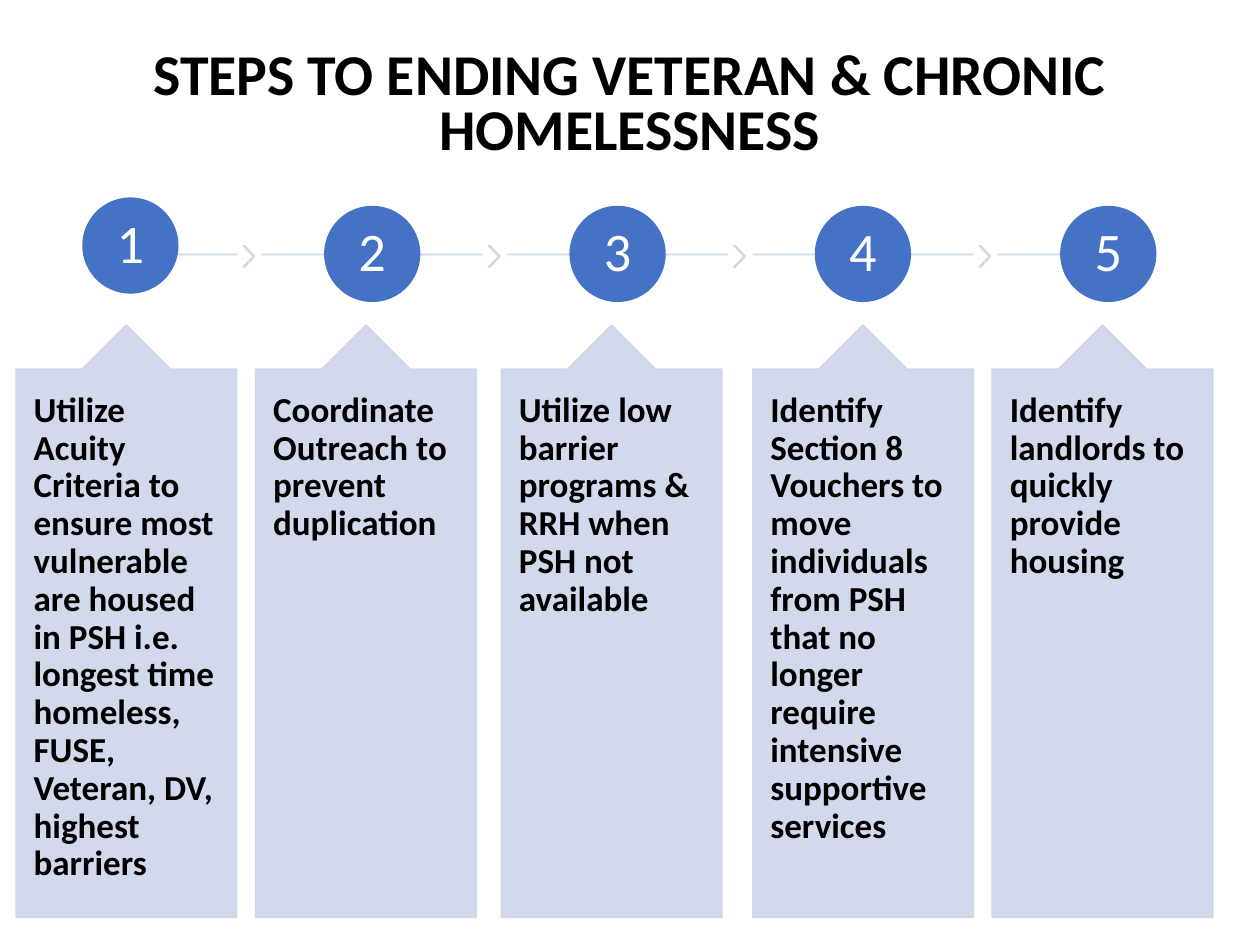
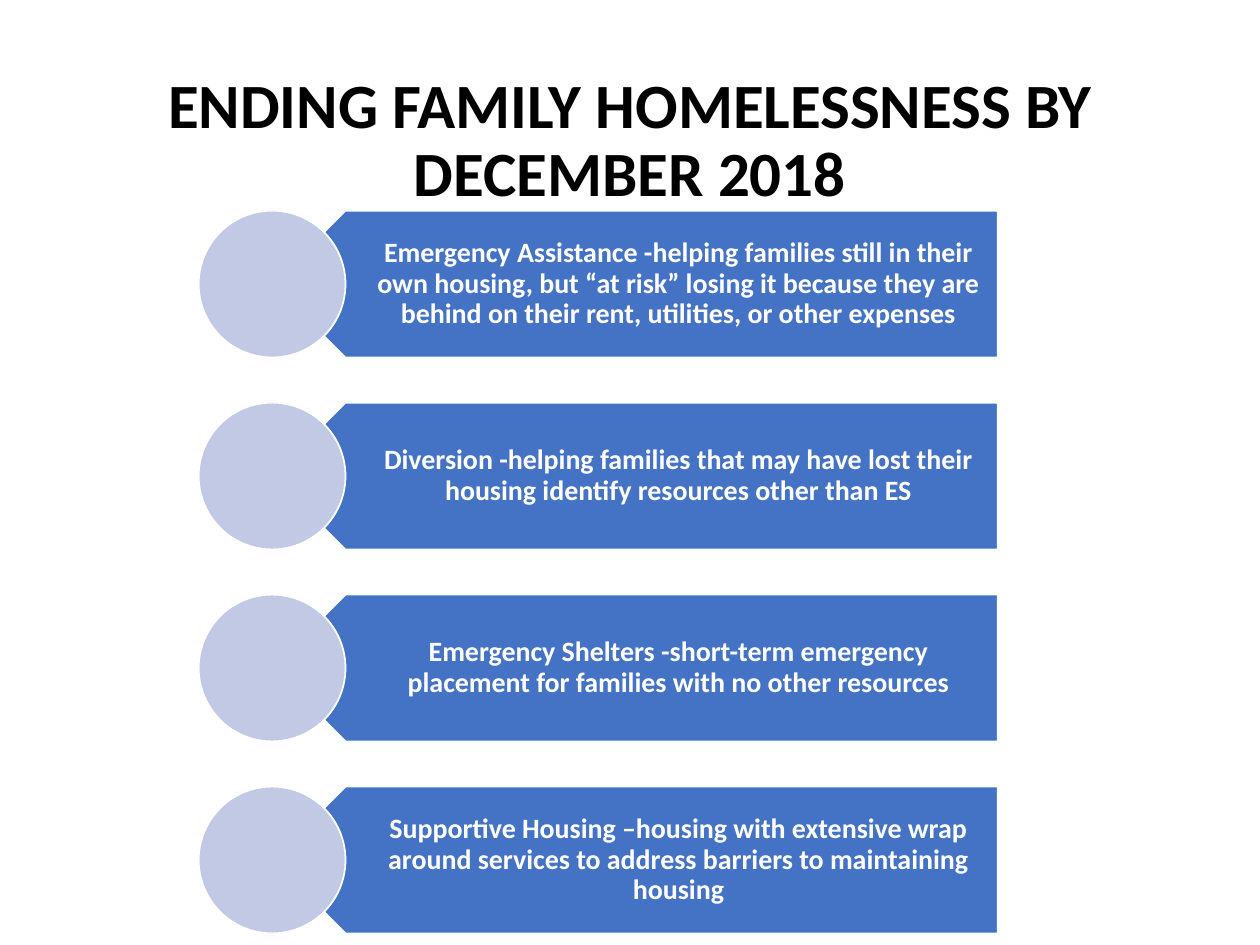
from lxml.etree import SubElement
from pptx import Presentation
from pptx.dml.color import RGBColor
from pptx.enum.shapes import MSO_CONNECTOR, MSO_SHAPE
from pptx.enum.text import MSO_ANCHOR, MSO_AUTO_SIZE, PP_ALIGN
from pptx.oxml.ns import qn
from pptx.util import Pt

COLORS = {
    "text": "000000",
    "white": "FFFFFF",
    "blue": "4472C4",
    "pale": "CFD5EA",
    "disc": "C1C9E4",
}
FONT = "Calibri"
PALE_OPACITY = 90

SLOT_LEFT, SLOT_PITCH, SLOT_WIDTH = 9.5, 140.2, 126
TRACK_TOP = 145.5
NUMBER_SIZE = 54
CALLOUT_TOP, CALLOUT_HEIGHT = 185.8, 338.4

STEPS = [
    (9.2, "Utilize Acuity Criteria to ensure most vulnerable are housed in PSH i.e. "
          "longest time homeless, FUSE, Veteran, DV, highest barriers"),
    (146.1, "Coordinate Outreach to prevent duplication"),
    (286.5, "Utilize low barrier programs & RRH when PSH not available"),
    (430.2, "Identify Section 8 Vouchers to move individuals from PSH that no longer "
            "require intensive supportive services"),
    (567, "Identify landlords to quickly provide housing"),
]

BAR_LEFT, BAR_TOP, BAR_PITCH = 155.5, 120.4, 109.7
BAR_WIDTH, BAR_HEIGHT = 414.7, 83.9

SERVICES = [
    "Emergency Assistance -helping families still in their own housing, but “at risk” "
    "losing it because they are behind on their rent, utilities, or other expenses",
    "Diversion -helping families that may have lost their housing identify resources other than ES",
    "Emergency Shelters -short-term emergency placement for families with no other resources",
    "Supportive Housing –housing with extensive wrap around services to address barriers "
    "to maintaining housing",
]


def write_text(box, text, size, color="text", bold=True, align=PP_ALIGN.CENTER,
               anchor=MSO_ANCHOR.MIDDLE, spacing=0.9, insets=(7.2, 3.6, 7.2, 3.6)):
    frame = box.text_frame
    frame.word_wrap = True
    frame.auto_size = MSO_AUTO_SIZE.NONE
    frame.vertical_anchor = anchor
    frame.margin_left, frame.margin_top, frame.margin_right, frame.margin_bottom = map(Pt, insets)
    para = frame.paragraphs[0]
    para.alignment = align
    para.line_spacing = spacing
    span = para.add_run()
    span.text = text
    span.font.name = FONT
    span.font.size = Pt(size)
    span.font.bold = bold
    span.font.color.rgb = RGBColor.from_string(COLORS[color])


def set_opacity(item, percent):
    for color in item._element.spPr.iter(qn("a:srgbClr")):
        SubElement(color, qn("a:alpha")).set("val", str(percent * 1000))


def add_figure(page, kind, left, top, width, height, fill, line=None, adjust=()):
    shape = page.shapes.add_shape(kind, Pt(left), Pt(top), Pt(width), Pt(height))
    shape.shadow.inherit = False
    shape.fill.solid()
    shape.fill.fore_color.rgb = RGBColor.from_string(COLORS[fill])
    shape.line.color.rgb = RGBColor.from_string(COLORS[line or fill])
    shape.line.width = Pt(1)
    for index, value in enumerate(adjust):
        shape.adjustments[index] = value
    if fill == "pale":
        set_opacity(shape, PALE_OPACITY)
    return shape


def add_track(page, start, end):
    track = page.shapes.add_connector(
        MSO_CONNECTOR.STRAIGHT, Pt(start), Pt(TRACK_TOP), Pt(end), Pt(TRACK_TOP))
    track.line.color.rgb = RGBColor.from_string(COLORS["pale"])
    track.line.width = Pt(1)
    SubElement(track._element.spPr, qn("a:effectLst"))
    set_opacity(track, PALE_OPACITY)


def add_titled_page(deck, title, size, **text_format):
    page = deck.slides.add_slide(deck.slide_layouts[5])
    box = page.shapes.title
    box.left, box.top, box.width, box.height = Pt(49.5), Pt(28.8), Pt(621), Pt(104.4)
    write_text(box, title, size, **text_format)
    return page


def add_step(page, index, callout_left, text):
    slot = SLOT_LEFT + index * SLOT_PITCH
    middle = slot + SLOT_WIDTH / 2
    first, last = index == 0, index == len(STEPS) - 1
    add_track(page, middle if first else slot, middle if last else slot + SLOT_WIDTH)
    if not last:
        add_figure(page, MSO_SHAPE.CHEVRON, slot + 129.5, 140.4, 6.5, 12.2, "pale", adjust=[0.9])
    number_left, number_top = (47.5, 113.3) if first else (slot + 36, 118.1)
    number = add_figure(page, MSO_SHAPE.OVAL, number_left, number_top,
                        NUMBER_SIZE, NUMBER_SIZE, "blue")
    write_text(number, str(index + 1), 31, color="white", bold=False, insets=(2, 2, 2, 2))
    callout = add_figure(page, MSO_SHAPE.UP_ARROW_CALLOUT, callout_left, CALLOUT_TOP,
                         SLOT_WIDTH, CALLOUT_HEIGHT, "pale", adjust=[0.5, 0.2, 0.2, 1])
    write_text(callout, text, 20, align=PP_ALIGN.LEFT, anchor=MSO_ANCHOR.TOP,
               insets=(10, 13, 10, 13))


def add_service(page, index, text):
    top = BAR_TOP + index * BAR_PITCH
    bar = add_figure(page, MSO_SHAPE.PENTAGON, BAR_LEFT, top, BAR_WIDTH, BAR_HEIGHT,
                     "blue", line="white")
    bar.rotation = 180
    label_left = BAR_LEFT + BAR_HEIGHT / 4
    label = page.shapes.add_textbox(Pt(label_left), Pt(top),
                                    Pt(BAR_LEFT + BAR_WIDTH - label_left), Pt(BAR_HEIGHT))
    write_text(label, text, 16, color="white", insets=(37.4, 5, 8.6, 5))
    add_figure(page, MSO_SHAPE.OVAL, BAR_LEFT - BAR_HEIGHT / 2, top, BAR_HEIGHT, BAR_HEIGHT,
               "disc", line="white")


def main():
    deck = Presentation()
    deck.slide_width, deck.slide_height = Pt(720), Pt(540)

    page = add_titled_page(deck, "STEPS TO ENDING VETERAN & CHRONIC HOMELESSNESS", 33,
                           spacing=0.8, insets=(7.2, 3.6, 7.2, 44))
    for index, (callout_left, text) in enumerate(STEPS):
        add_step(page, index, callout_left, text)

    page = add_titled_page(deck, "ENDING FAMILY HOMELESSNESS BY DECEMBER 2018", 36)
    for index, text in enumerate(SERVICES):
        add_service(page, index, text)

    deck.save("out.pptx")


if __name__ == "__main__":
    main()
